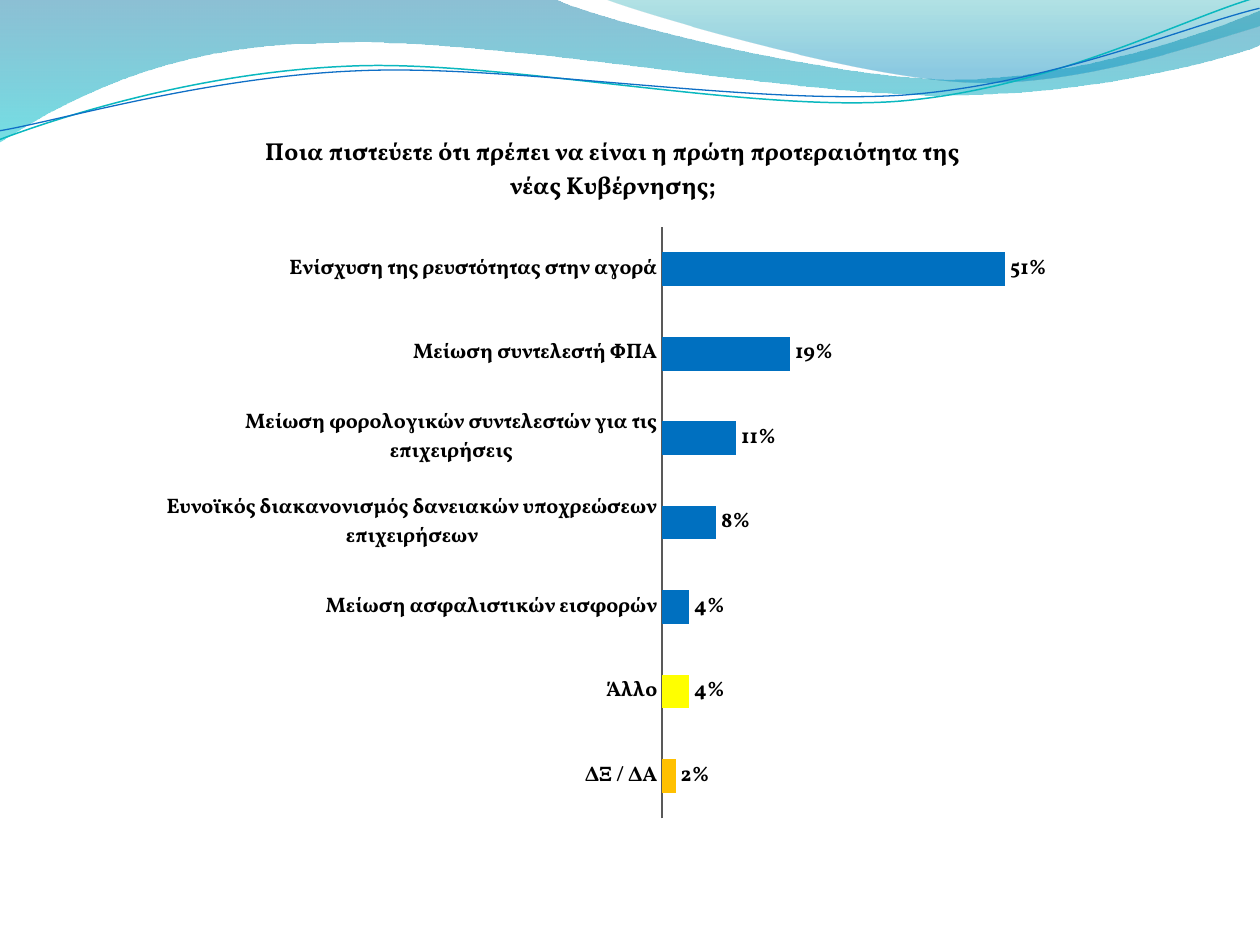
from itertools import islice

from lxml.etree import SubElement
from pptx import Presentation
from pptx.chart.data import CategoryChartData
from pptx.dml.color import RGBColor
from pptx.enum.chart import XL_CHART_TYPE as ChartType, XL_LABEL_POSITION as LabelPosition
from pptx.enum.chart import XL_TICK_MARK as TickMark
from pptx.oxml import parse_xml
from pptx.oxml.ns import nsdecls, qn
from pptx.util import Pt

PX = 914400 / 126
FONT = "Vollkorn"
LINE_ROTATION = 357.3

BACK_WAVE = [(0, -1), (554, -1), (600, 21, 837, 79, 955, 79), (1075, 79, 1207, 33, 1260, 11),
             (1261, 45), (1239, 55, 1096, 96, 940, 95), (784, 95, 481, 35, 324, 43),
             (163, 44, 58, 105, -1, 142)]
FRONT_WAVE = [(604, -1), (641, 14, 859, 78, 969, 82), (1079, 87, 1211, 40, 1260, 26), (1260, 0)]
TEAL_LINE = [(-3, 110), (59, 90, 199, 52, 350, 53), (499, 53, 745, 118, 896, 114),
             (1049, 109, 1184, 45, 1260, 27)]
BLUE_LINE = [(-2, 101), (57, 94, 207, 57, 357, 58), (509, 58, 750, 111, 902, 108),
             (1052, 104, 1188, 52, 1262, 38)]

TITLE = "Ποια πιστεύετε ότι πρέπει να είναι η πρώτη προτεραιότητα της νέας Κυβέρνησης;"
PRIORITIES = {
    "Ενίσχυση της ρευστότητας στην αγορά": 0.51,
    "Μείωση συντελεστή ΦΠΑ": 0.19,
    "Μείωση φορολογικών συντελεστών για τις επιχειρήσεις": 0.11,
    "Ευνοϊκός διακανονισμός δανειακών υποχρεώσεων επιχειρήσεων": 0.08,
    "Μείωση ασφαλιστικών εισφορών": 0.04,
    "Άλλο": 0.04,
    "ΔΞ / ΔΑ": 0.02,
}
POINT_COLOURS = {5: "FFFF00", 6: "FFC000"}


def px(value):
    """Turn px into EMU."""
    return round(value * PX)


def colour(hex_text):
    """Turn a hex string into a colour."""
    return RGBColor.from_string(hex_text)


def bend(shape, segments):
    """Merge the three lines of every six-number segment into one cubic curve."""
    outline = next(shape._element.iter(qn("a:path")))
    lines = iter(outline.findall(qn("a:lnTo")))
    for segment in segments[1:]:
        first, *others = islice(lines, len(segment) // 2)
        if others:
            first.tag = qn("a:cubicBezTo")
        for line in others:
            first.append(line[0])
            outline.remove(line)


def add_curve(shapes, left, top, segments, close):
    """Add a freeform of straight (x, y) and cubic (x1, y1, x2, y2, x, y) segments."""
    points = [(px(left + x), px(top + y))
              for segment in segments for x, y in zip(segment[::2], segment[1::2])]
    builder = shapes.build_freeform(*points[0])
    builder.add_line_segments(points[1:], close=close)
    shape = builder.convert_to_shape()
    bend(shape, segments)
    shape.shadow.inherit = False
    return shape


def add_wave(shapes, left, top, segments, stops):
    """Add a wave with a translucent top-down gradient of (position, colour, opacity)."""
    shape = add_curve(shapes, left, top, segments, True)
    shape.line.fill.background()
    shape.fill.gradient()
    shape.fill.gradient_angle = 270
    for stop, (position, hex_text, _) in zip(shape.fill.gradient_stops, stops):
        stop.position = position
        stop.color.rgb = colour(hex_text)
    for element, (_, _, opacity) in zip(shape._element.spPr.iter(qn("a:srgbClr")), stops):
        SubElement(element, qn("a:alpha")).set("val", str(opacity * 1000))


def add_wave_line(shapes, left, top, segments, hex_text, width):
    """Add an unfilled, slightly turned wavy line."""
    shape = add_curve(shapes, left, top, segments, False)
    shape.rotation = LINE_ROTATION
    shape.fill.background()
    shape.line.color.rgb = colour(hex_text)
    shape.line.width = Pt(width)


def add_header(slide, left, top):
    """Place the waves and the grouped lines of the header."""
    add_wave(slide.shapes, left, top, BACK_WAVE, [(0, "0074A1", 45), (1, "00C6CF", 55)])
    add_wave(slide.shapes, left, top, FRONT_WAVE, [(0, "00A1A9", 30), (0.8, "008BBF", 45)])
    lines = slide.shapes.add_group_shape().shapes
    add_wave_line(lines, left, top, TEAL_LINE, "0AB8BF", 0.85)
    add_wave_line(lines, left, top, BLUE_LINE, "0F6FC6", 0.75)


def style_font(font, size, bold=True):
    """Set the chart typeface, size and weight in black."""
    font.name = FONT
    font.size = Pt(size)
    font.bold = bold
    font.color.rgb = colour("000000")


def set_plot_area(chart, **fractions):
    """Fix the inner plot area as fractions of the chart."""
    plot_area = chart._chartSpace.chart.plotArea
    for layout in plot_area.findall(qn("c:layout")):
        plot_area.remove(layout)
    values = "".join(f'<c:{name} val="{value}"/>' for name, value in fractions.items())
    plot_area.insert(0, parse_xml(
        f'<c:layout {nsdecls("c")}><c:manualLayout><c:layoutTarget val="inner"/>'
        f'<c:xMode val="edge"/><c:yMode val="edge"/>{values}</c:manualLayout></c:layout>'))


def add_priority_chart(slide, left, top, width, height):
    """Place the bar chart of priorities in the given box."""
    data = CategoryChartData(number_format="0%")
    data.categories = list(PRIORITIES)
    data.add_series("Series 1", list(PRIORITIES.values()))
    chart = slide.shapes.add_chart(ChartType.BAR_CLUSTERED, px(left), px(top),
                                   px(width), px(height), data).chart
    style_font(chart.font, 10, False)
    chart.has_legend = False
    chart.has_title = True
    title_frame = chart.chart_title.text_frame
    title_frame.text = TITLE
    style_font(title_frame.paragraphs[0].runs[0].font, 14)
    chart.chart_title.include_in_layout = False
    set_plot_area(chart, x=0.553, y=0.164, w=0.433, h=0.816)

    category_axis = chart.category_axis
    category_axis.reverse_order = True
    category_axis.major_tick_mark = category_axis.minor_tick_mark = TickMark.NONE
    category_axis.format.line.color.rgb = colour("595959")
    category_axis.format.line.width = Pt(1)
    style_font(category_axis.tick_labels.font, 12)
    value_axis = chart.value_axis
    value_axis.minimum_scale, value_axis.maximum_scale = 0, 0.6
    value_axis.has_major_gridlines = False
    value_axis.visible = False

    plot = chart.plots[0]
    plot.vary_by_categories = False
    plot.gap_width = 150
    series = plot.series[0]
    series.format.fill.solid()
    series.format.fill.fore_color.rgb = colour("0070C0")
    for index, hex_text in POINT_COLOURS.items():
        fill = series.points[index].format.fill
        fill.solid()
        fill.fore_color.rgb = colour(hex_text)
    labels = series.data_labels
    labels.show_value = True
    labels.number_format = "0%"
    labels.number_format_is_linked = False
    labels.position = LabelPosition.OUTSIDE_END
    style_font(labels.font, 12)


def main():
    """Build and save the slide."""
    presentation = Presentation()
    presentation.slide_width, presentation.slide_height = px(1260), px(945)
    slide = presentation.slides.add_slide(presentation.slide_layouts[6])
    add_header(slide, 0, 0)
    add_priority_chart(slide, 147, 108, 932, 725)
    presentation.save("out.pptx")


if __name__ == "__main__":
    main()
